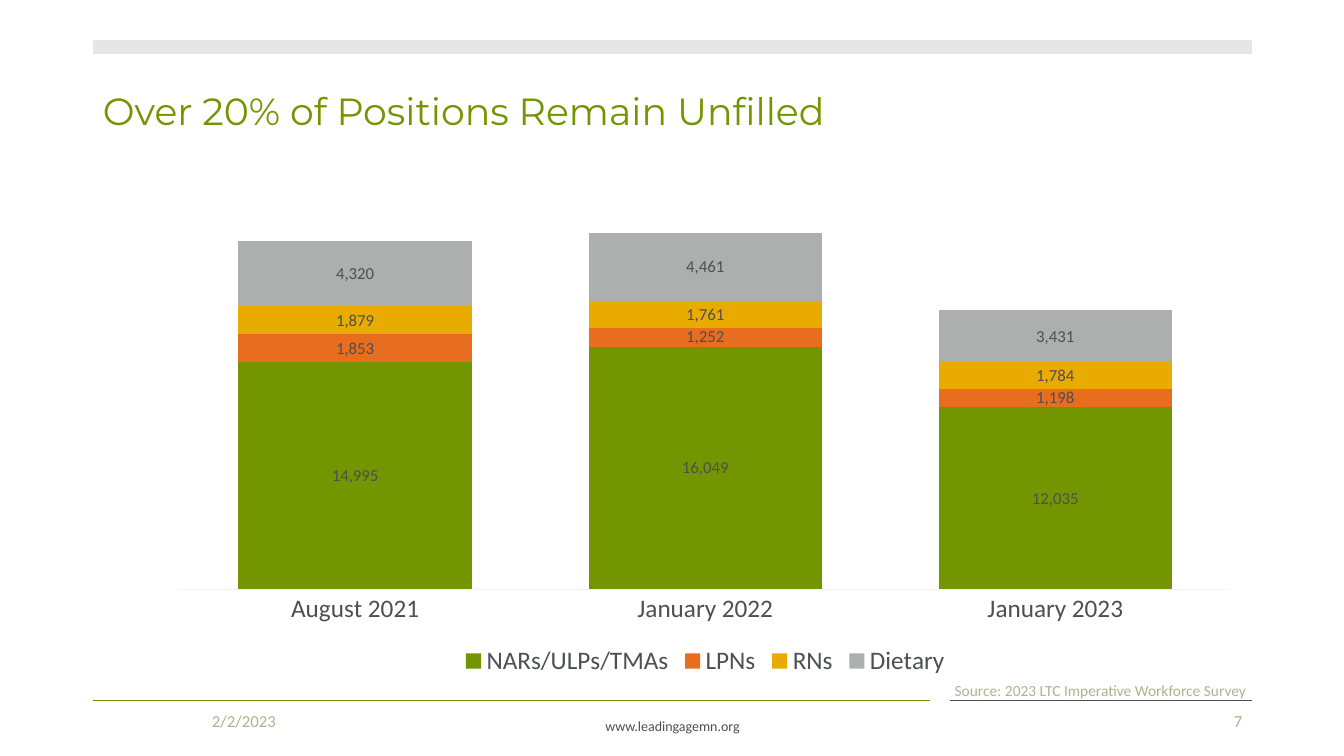
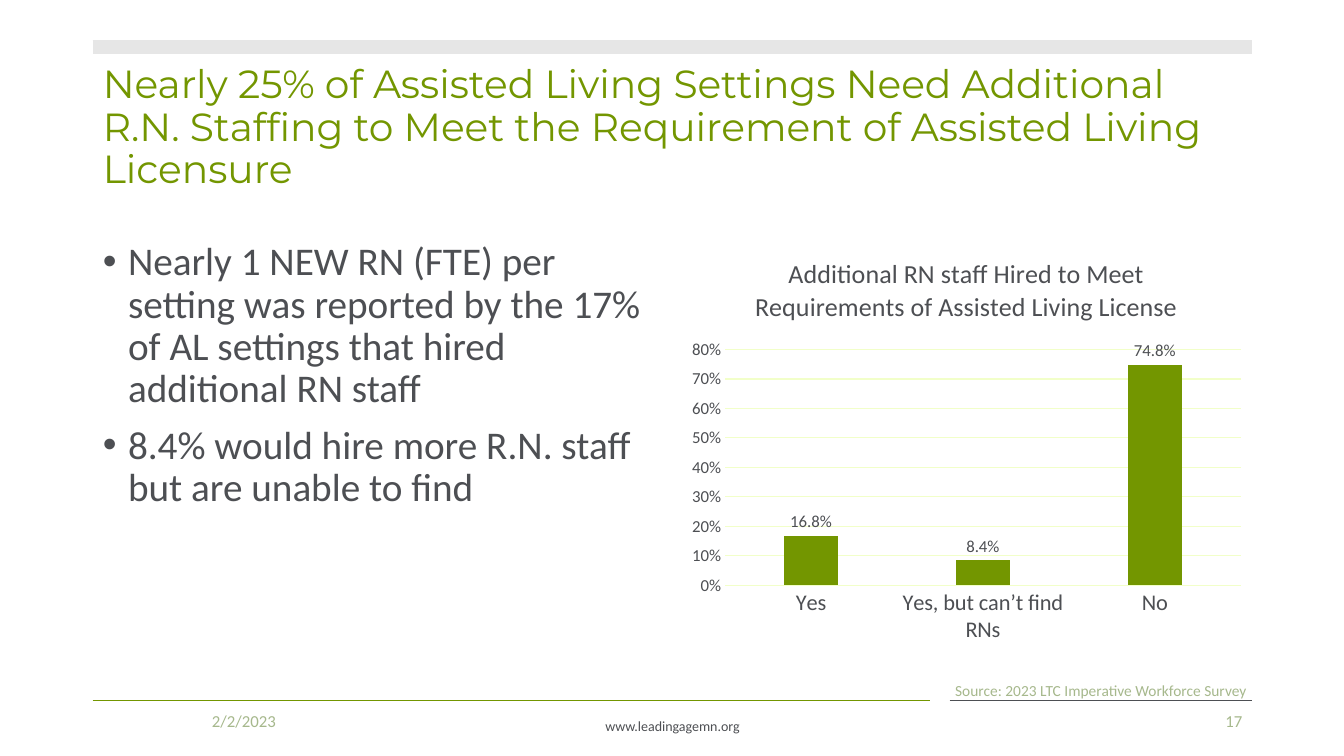
from lxml.etree import SubElement
from pptx import Presentation
from pptx.chart.data import CategoryChartData
from pptx.dml.color import RGBColor
from pptx.enum.chart import XL_CHART_TYPE, XL_LABEL_POSITION, XL_LEGEND_POSITION, XL_TICK_MARK
from pptx.enum.shapes import MSO_CONNECTOR
from pptx.enum.text import MSO_ANCHOR, MSO_AUTO_SIZE, PP_ALIGN
from pptx.oxml.ns import qn
from pptx.util import Inches, Pt

COLORS = {
    "green": "739600", "orange": "E86D1F", "gold": "EAAB00", "silver": "ADAFAF",
    "text": "4D4F53", "band": "E6E6E6", "muted": "A6B88C", "grid": "F2FFC9", "white": "FFFFFF",
}
BODY_FONT, TITLE_FONT = "Calibri", "Montserrat"
WIDTH, HEIGHT = 13.33, 7.5
LEFT, RIGHT = 0.92, 12.42
CONTENT_WIDTH = RIGHT - LEFT
COLUMN_GAP = 0.16
COLUMN_WIDTH = (CONTENT_WIDTH - COLUMN_GAP) / 2
BAND_Y, FOOTER_Y, CONTENT_TOP = 0.47, 6.95, 2.35
NUMBER_LEFT = RIGHT - 3

RULES = [
    (LEFT, RIGHT, BAND_Y, "band", 10),
    (LEFT, NUMBER_LEFT - 0.2, FOOTER_Y, "green", 1),
    (NUMBER_LEFT, RIGHT, FOOTER_Y, "text", 1),
]
WEBSITE = "www.leadingagemn.org"
DATE = "2/2/2023"
SOURCE = "Source: 2023 LTC Imperative Workforce Survey"

VACANCIES = {
    "title": "Over 20% of Positions Remain Unfilled",
    "categories": ["August 2021", "January 2022", "January 2023"],
    "series": [
        ("NARs/ULPs/TMAs", [14995, 16049, 12035], "green"),
        ("LPNs", [1853, 1252, 1198], "orange"),
        ("RNs", [1879, 1761, 1784], "gold"),
        ("Dietary", [4320, 4461, 3431], "silver"),
    ],
}
HIRING_TITLE = "Additional RN staff Hired to Meet Requirements of Assisted Living License"
HIRING = {
    "title": "Nearly 25% of Assisted Living Settings Need Additional R.N. Staffing to Meet "
             "the Requirement of Assisted Living Licensure",
    "bullets": [
        "Nearly 1 NEW RN (FTE) per setting was reported by the 17% of AL settings "
        "that hired additional RN staff",
        "8.4% would hire more R.N. staff but are unable to find",
    ],
    "categories": ["Yes", "Yes, but can’t find RNs", "No"],
    "series": [(HIRING_TITLE, [0.168, 0.084, 0.748], "green")],
}


def rgb(name):
    return RGBColor.from_string(COLORS[name])


def style_font(font, size, color="text", name=BODY_FONT):
    font.size, font.name, font.bold = Pt(size), name, False
    font.color.rgb = rgb(color)


def style_line(line, color, width):
    line.color.rgb = rgb(color)
    line.width = Pt(width)


def move(shape, *box):
    shape.left, shape.top, shape.width, shape.height = map(Inches, box)


def add_run(paragraph, text, size, color="text", name=BODY_FONT):
    run = paragraph.add_run()
    run.text = text
    style_font(run.font, size, color, name)


def add_text(slide, text, box, size, color="muted", align=PP_ALIGN.CENTER, anchor=MSO_ANCHOR.MIDDLE):
    frame = slide.shapes.add_textbox(*map(Inches, box)).text_frame
    frame.word_wrap = True
    frame.vertical_anchor = anchor
    paragraph = frame.paragraphs[0]
    paragraph.alignment = align
    add_run(paragraph, text, size, color)


def add_rule(slide, start, end, y, color, width):
    rule = slide.shapes.add_connector(
        MSO_CONNECTOR.STRAIGHT, Inches(start), Inches(y), Inches(end), Inches(y))
    style_line(rule.line, color, width)
    SubElement(rule._element.spPr, qn("a:effectLst"))


def add_slide(presentation, layout, title, title_top, title_size, number, source_left, source_align):
    slide = presentation.slides.add_slide(presentation.slide_layouts[layout])
    slide.background.fill.solid()
    slide.background.fill.fore_color.rgb = rgb("white")
    for rule in RULES:
        add_rule(slide, *rule)
    shape = slide.shapes.title
    move(shape, LEFT, title_top, CONTENT_WIDTH, 1.45)
    frame = shape.text_frame
    frame.auto_size = MSO_AUTO_SIZE.NONE
    frame.vertical_anchor = MSO_ANCHOR.MIDDLE
    paragraph = frame.paragraphs[0]
    paragraph.alignment = PP_ALIGN.LEFT
    paragraph.line_spacing = 0.9
    add_run(paragraph, title, title_size, "green", TITLE_FONT)
    add_text(slide, WEBSITE, (4.42, 7.07, 4.5, 0.28), 10, "text", anchor=MSO_ANCHOR.TOP)
    add_text(slide, DATE, (LEFT, FOOTER_Y, 3, 0.4), 12)
    add_text(slide, number, (NUMBER_LEFT, FOOTER_Y, 3, 0.4), 12, align=PP_ALIGN.RIGHT)
    add_text(slide, SOURCE, (source_left, 6.65, 4.5, 0.4), 11, align=source_align)
    return slide


def fill_bullets(shape, bullets):
    move(shape, LEFT, CONTENT_TOP, COLUMN_WIDTH, 4.4)
    frame = shape.text_frame
    frame.auto_size = MSO_AUTO_SIZE.NONE
    for index, text in enumerate(bullets):
        paragraph = frame.add_paragraph() if index else frame.paragraphs[0]
        properties = paragraph._p.get_or_add_pPr()
        properties.set("marL", str(Inches(0.25)))
        properties.set("indent", str(-Inches(0.25)))
        SubElement(properties, qn("a:buFont"), typeface="Arial")
        SubElement(properties, qn("a:buChar"), char="•")
        paragraph.line_spacing = 0.9
        paragraph.space_before = Pt(10 if index else 0)
        add_run(paragraph, text, 28)


def add_column_chart(slide, content, kind, box, gap, overlap, number_format, label_position,
                     category_size, maximum):
    data = CategoryChartData(number_format=number_format)
    data.categories = content["categories"]
    for name, values, _ in content["series"]:
        data.add_series(name, values)
    chart = slide.shapes.add_chart(kind, *map(Inches, box), data).chart
    style_font(chart.font, 10)
    chart.has_title = chart.has_legend = False
    plot = chart.plots[0]
    plot.gap_width, plot.overlap, plot.vary_by_categories = gap, overlap, False
    for series, (_, _, color) in zip(plot.series, content["series"]):
        series.format.fill.solid()
        series.format.fill.fore_color.rgb = rgb(color)
        series.invert_if_negative = False
        labels = series.data_labels
        labels.show_value = True
        labels.number_format, labels.number_format_is_linked = number_format, False
        labels.position = label_position
        style_font(labels.font, 12)
    category_axis, value_axis = chart.category_axis, chart.value_axis
    for axis in (category_axis, value_axis):
        axis.major_tick_mark = axis.minor_tick_mark = XL_TICK_MARK.NONE
    style_font(category_axis.tick_labels.font, category_size)
    style_line(category_axis.format.line, "grid", 0.75)
    value_axis.has_major_gridlines = False
    value_axis.minimum_scale, value_axis.maximum_scale = 0, maximum
    return chart


def build_vacancies(presentation):
    slide = add_slide(presentation, 5, VACANCIES["title"], 0.4, 27, "7", 9.37, PP_ALIGN.LEFT)
    chart = add_column_chart(
        slide, VACANCIES, XL_CHART_TYPE.COLUMN_STACKED, (1.57, 2, RIGHT - 1.57, 4.76),
        50, 100, "#,##0", XL_LABEL_POSITION.CENTER, 18, 25000)
    chart.value_axis.visible = False
    chart.has_legend = True
    chart.legend.position = XL_LEGEND_POSITION.BOTTOM
    chart.legend.include_in_layout = False
    style_font(chart.legend.font, 18)


def build_hiring(presentation):
    slide = add_slide(presentation, 1, HIRING["title"], 0.55, 28, "17", 8.67, PP_ALIGN.CENTER)
    fill_bullets(slide.placeholders[1], HIRING["bullets"])
    chart = add_column_chart(
        slide, HIRING, XL_CHART_TYPE.COLUMN_CLUSTERED,
        (RIGHT - COLUMN_WIDTH, CONTENT_TOP, COLUMN_WIDTH, 4.12),
        219, -27, "0.0%", XL_LABEL_POSITION.OUTSIDE_END, 16, 0.8)
    chart.has_title = True
    add_run(chart.chart_title.text_frame.paragraphs[0], HIRING_TITLE, 18.6)
    chart.chart_title.include_in_layout = False
    axis = chart.value_axis
    axis.major_unit = 0.1
    axis.has_major_gridlines = True
    style_line(axis.major_gridlines.format.line, "grid", 0.75)
    axis.format.line.fill.background()
    axis.tick_labels.number_format, axis.tick_labels.number_format_is_linked = "0%", False
    style_font(axis.tick_labels.font, 12)


def main():
    presentation = Presentation()
    presentation.slide_width, presentation.slide_height = Inches(WIDTH), Inches(HEIGHT)
    build_vacancies(presentation)
    build_hiring(presentation)
    presentation.save("out.pptx")


if __name__ == "__main__":
    main()
